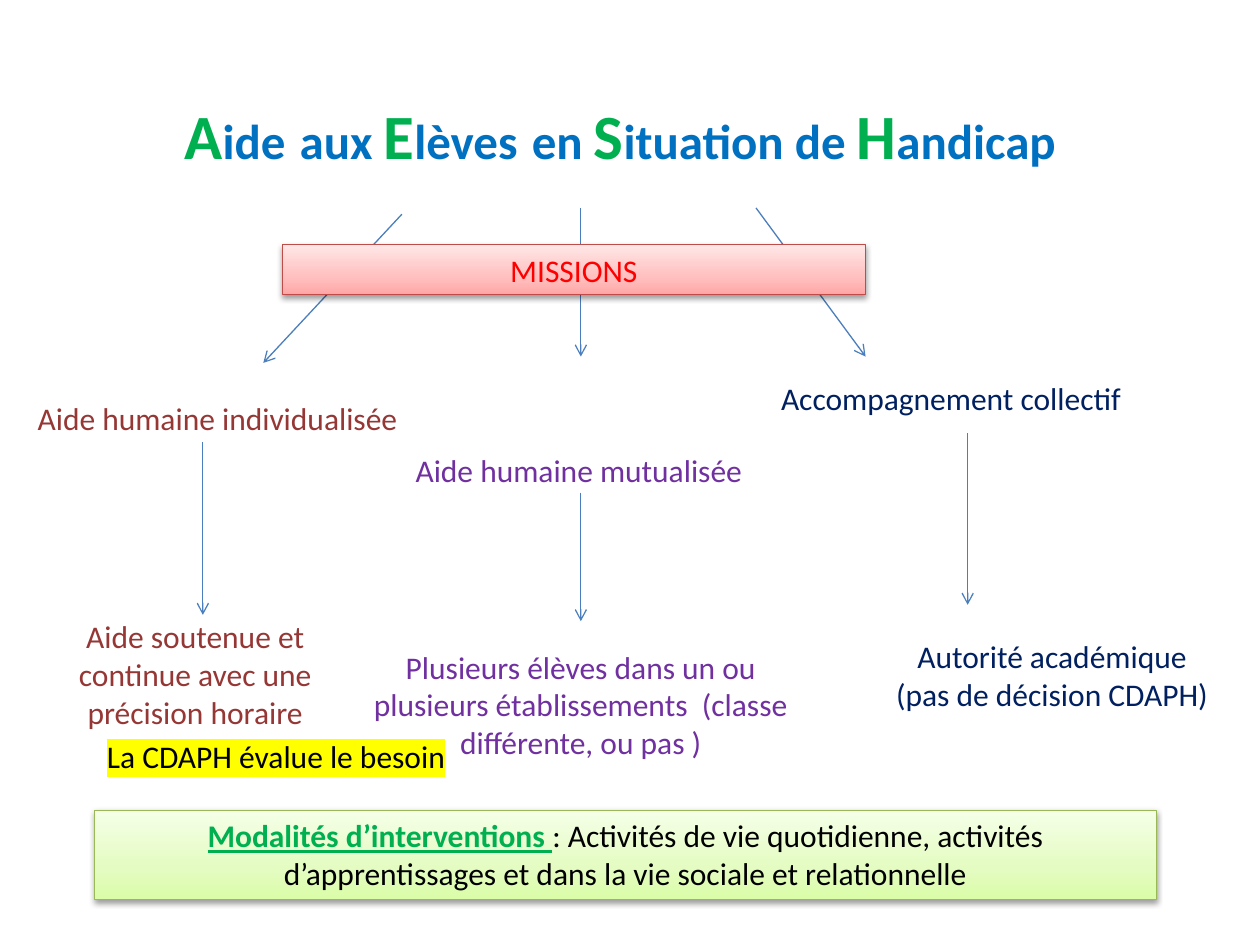
from copy import deepcopy
from dataclasses import dataclass

from lxml import etree
from pptx import Presentation
from pptx import util as u
from pptx.dml.color import RGBColor
from pptx.enum import shapes, text
from pptx.oxml import ns


@dataclass(frozen=True)
class Theme:
    font: str = "Calibri"
    body: int = 18
    head: int = 28
    cap: int = 36
    thin: float = 0.75
    arrow: str = "4B7EBC"
    black: str = "000000"
    blue: str = "0070C0"
    green: str = "00B050"
    red: str = "FF0000"
    brown: str = "953735"
    violet: str = "7030A0"
    navy: str = "002060"
    mark: str = "FFFF00"
    rose: tuple = ("FFA6A5", "FFC0BF", "FFE7E7")
    lime: tuple = ("DAFDA7", "E4FCC2", "F5FFE7")
    rim: tuple = ("BF4C48", "98B955")


T = Theme()
LEFT, WIDE = 0.75, 8.43


def paint(obj, **form):
    for key, val in form.items():
        setattr(obj, key, val)


def color(code):
    return RGBColor.from_string(code)


def node(root, tag, **atts):
    return etree.SubElement(root, ns.qn(tag), **atts)


def write(shape, runs, center):
    frame = shape.text_frame
    paint(frame, word_wrap=True, auto_size=text.MSO_AUTO_SIZE.SHAPE_TO_FIT_TEXT,
          vertical_anchor=text.MSO_ANCHOR.TOP)
    para = frame.paragraphs[0]
    para.alignment = text.PP_ALIGN.CENTER if center else text.PP_ALIGN.LEFT
    for words, code, form in runs:
        run = para.add_run()
        run.text = words
        paint(run.font, **{"name": T.font, "size": u.Pt(T.body), **form})
        run.font.color.rgb = color(code)


def label(slide, area, runs, center=False):
    box = slide.shapes.add_textbox(*map(u.Inches, area))
    write(box, runs, center)
    return box


def mark(box, code):
    for run in box.text_frame.paragraphs[0].runs:
        fill = run.font._element.find(ns.qn("a:solidFill"))
        tint = etree.Element(ns.qn("a:highlight"))
        node(tint, "a:srgbClr", val=code)
        fill.addnext(tint)


def arrow(slide, start, end):
    line = slide.shapes.add_connector(
        shapes.MSO_CONNECTOR.STRAIGHT, *map(u.Inches, start + end))
    line.line.color.rgb = color(T.arrow)
    line.line.width = u.Pt(T.thin)
    node(line.line._get_or_add_ln(), "a:tailEnd", type="arrow")
    node(line._element.spPr, "a:effectLst")


def shade(shape, tones):
    fill = shape.fill
    fill.gradient()
    fill.gradient_angle = 90
    stops = shape._element.spPr.find(".//" + ns.qn("a:gsLst"))
    stops.append(deepcopy(stops[0]))
    for stop, place, code in zip(fill.gradient_stops, (0, 0.35, 1), tones):
        stop.position = place
        stop.color.rgb = color(code)


def shadow(shape):
    shape.shadow.inherit = False
    root = shape._element.spPr.find(ns.qn("a:effectLst"))
    drop = node(root, "a:outerShdw", blurRad=str(u.Pt(3.1)),
                dist=str(u.Pt(1.6)), dir="5400000", rotWithShape="0")
    tint = node(drop, "a:srgbClr", val=T.black)
    node(tint, "a:alpha", val="38000")


def banner(slide, area, tones, rim, runs):
    box = slide.shapes.add_shape(
        shapes.MSO_SHAPE.RECTANGLE, *map(u.Inches, area))
    shade(box, tones)
    box.line.color.rgb = color(rim)
    box.line.width = u.Pt(T.thin)
    shadow(box)
    write(box, runs, True)


def title(slide):
    cap = {"size": u.Pt(T.cap), "bold": True}
    head = {"size": u.Pt(T.head), "bold": True}
    runs = []
    for first, rest, gap in (("A", "ide", " "), ("", "aux ", ""),
                             ("E", "lèves", " "), ("", "en ", ""),
                             ("S", "ituation de ", ""), ("H", "andicap ", "")):
        parts = ((first, T.green, cap), (rest, T.blue, head),
                 (gap, T.black, cap))
        runs += [part for part in parts if part[0]]
    label(slide, (LEFT, 0.72, WIDE, 0.71), runs, True)


def main():
    deck = Presentation()
    paint(deck, slide_width=u.Inches(10), slide_height=u.Inches(7.5))
    slide = deck.slides.add_slide(deck.slide_layouts[6])
    title(slide)

    for start, end in (((3.19, 1.7), (2.09, 2.88)),
                       ((4.61, 1.65), (4.61, 2.83)),
                       ((6, 1.65), (6.87, 2.83)),
                       ((1.61, 3.51), (1.61, 4.88)),
                       ((4.61, 3.91), (4.61, 4.93)),
                       ((7.68, 3.44), (7.68, 4.8))):
        arrow(slide, start, end)

    aids = (
        (T.brown, "Aide humaine individualisée", (0.2, 3.12, 3.31, 0.4),
         "Aide soutenue et continue avec une précision horaire",
         (0.17, 4.85, 2.76, 1.01)),
        (T.violet, "Aide humaine mutualisée", (3.2, 3.53, 3.07, 0.4),
         "Plusieurs élèves dans un ou plusieurs établissements  "
         "(classe différente, ou pas )", (2.78, 5.09, 3.66, 1.01)),
        (T.navy, "Accompagnement collectif", (6.1, 2.96, 3.15, 0.4),
         "Autorité académique (pas de décision CDAPH)",
         (6.97, 5.01, 2.76, 0.71)),
    )
    for code, name, top, note, low in aids:
        label(slide, top, [(name, code, {})])
        label(slide, low, [(note, code, {})], True)

    banner(slide, (LEFT, 6.43, WIDE, 0.71), T.lime, T.rim[1], [
        ("Modalités d’interventions ", T.green,
         {"bold": True, "underline": True}),
        (": Activités de vie quotidienne, activités d’apprentissages "
         "et dans la vie sociale et relationnelle", T.black, {})])
    banner(slide, (2.24, 1.94, 4.63, 0.4), T.rose, T.rim[0],
           [("MISSIONS", T.red, {})])
    need = label(slide, (LEFT, 5.8, 3.65, 0.4),
                 [("La CDAPH évalue le besoin", T.black, {})])
    mark(need, T.mark)
    deck.save("out.pptx")


if __name__ == "__main__":
    main()
